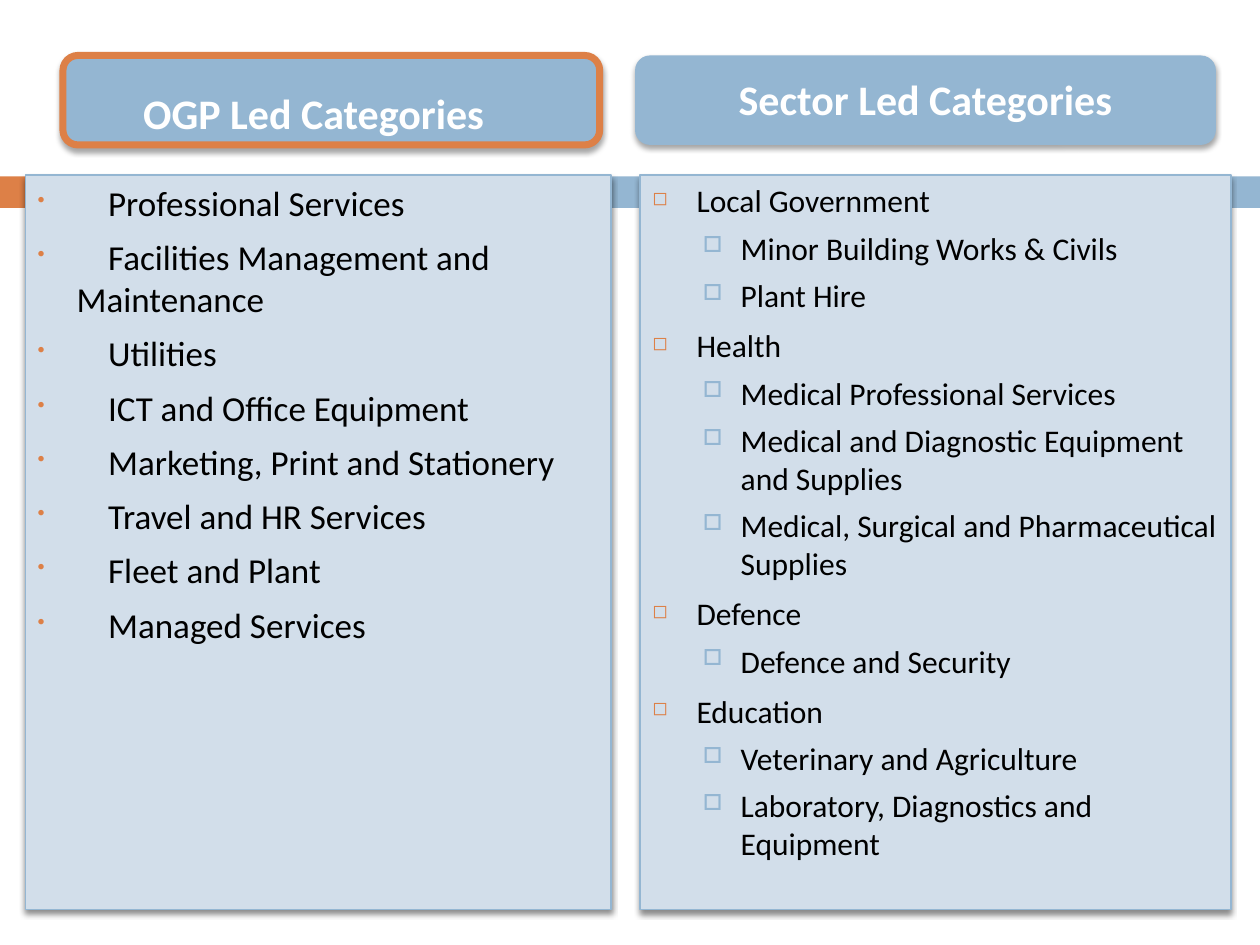
from dataclasses import dataclass

from lxml import etree
from pptx import Presentation
from pptx.dml.color import RGBColor
from pptx.enum.shapes import MSO_SHAPE
from pptx.enum.text import MSO_ANCHOR, PP_ALIGN
from pptx.oxml.ns import qn
from pptx.util import Inches, Pt

RECT, ROUNDED = MSO_SHAPE.RECTANGLE, MSO_SHAPE.ROUNDED_RECTANGLE
TOP, MIDDLE = MSO_ANCHOR.TOP, MSO_ANCHOR.MIDDLE
LEFT, CENTER = PP_ALIGN.LEFT, PP_ALIGN.CENTER


@dataclass(frozen=True)
class Theme:
    font: str = "Calibri"
    orange: str = "DD8047"
    blue: str = "94B6D2"
    pale: str = "D2DEEA"
    white: str = "FFFFFF"
    black: str = "000000"
    heading: float = 24
    ogp_item: float = 20
    sector_item: float = 18


@dataclass(frozen=True)
class Level:
    char: str
    color: str
    percent: int
    margin: float
    hang: float
    before: float
    tabs: tuple = ()


THEME = Theme()
# The tab sets the first line of an item further in than its wrapped lines
OGP_LEVELS = [Level("•", THEME.orange, 60, 0.31, 0.31, 7, (0.25, 0.56))]
SECTOR_LEVELS = [
    Level("◻", THEME.orange, 60, 0.35, 0.35, 7),
    Level("□", THEME.blue, 70, 0.7, 0.3, 5.5),
]

OGP_ITEMS = [
    "Professional Services",
    "Facilities Management and Maintenance",
    "Utilities",
    "ICT and Office Equipment",
    "Marketing, Print and Stationery",
    "Travel and HR Services",
    "Fleet and Plant",
    "Managed Services",
]
SECTORS = {
    "Local Government": ["Minor Building Works & Civils", "Plant Hire"],
    "Health": [
        "Medical Professional Services",
        "Medical and Diagnostic Equipment and Supplies",
        "Medical, Surgical and Pharmaceutical Supplies",
    ],
    "Defence": ["Defence and Security"],
    "Education": [
        "Veterinary and Agriculture",
        "Laboratory, Diagnostics and Equipment",
    ],
}


def add_child(parent, tag, **attrs):
    child = etree.SubElement(parent, qn(tag))
    for name, value in attrs.items():
        child.set(name, str(value))
    return child


def add_shadow(sp, opacity, distance):
    effects = sp._element.spPr.find(qn("a:effectLst"))
    shadow = add_child(effects, "a:outerShdw", blurRad=Pt(3), dist=Pt(distance),
                       dir=90 * 60000, algn="ctr", rotWithShape=0)
    color = add_child(shadow, "a:srgbClr", val=THEME.black)
    add_child(color, "a:alpha", val=opacity * 1000)


def add_block(s, shape, box, fill, line=None, width=0):
    sp = s.shapes.add_shape(shape, *[Inches(v) for v in box])
    sp.shadow.inherit = False
    sp.fill.solid()
    sp.fill.fore_color.rgb = RGBColor.from_string(fill)
    if line:
        sp.line.color.rgb = RGBColor.from_string(line)
        sp.line.width = Pt(width)
    else:
        sp.line.fill.background()
    return sp


def set_frame(sp, anchor, left, top, right, bottom):
    tf = sp.text_frame
    tf.word_wrap = True
    tf.vertical_anchor = anchor
    tf.margin_left, tf.margin_right = Inches(left), Inches(right)
    tf.margin_top, tf.margin_bottom = Inches(top), Inches(bottom)
    return tf


def set_font(p, size, color, bold=False):
    p.font.name = THEME.font
    p.font.size = Pt(size)
    p.font.bold = bold
    p.font.color.rgb = RGBColor.from_string(color)


def add_heading(s, box, text, anchor, insets, line=None, width=0):
    sp = add_block(s, ROUNDED, box, THEME.blue, line, width)
    add_shadow(sp, 35, 2)
    p = set_frame(sp, anchor, *insets).paragraphs[0]
    p.text = text
    p.alignment = CENTER
    set_font(p, THEME.heading, THEME.white, bold=True)


def set_bullet(p, level):
    pPr = p._p.get_or_add_pPr()
    pPr.set("marL", str(Inches(level.margin)))
    pPr.set("indent", str(-Inches(level.hang)))
    add_child(add_child(pPr, "a:buClr"), "a:srgbClr", val=level.color)
    add_child(pPr, "a:buSzPct", val=level.percent * 1000)
    add_child(pPr, "a:buChar", char=level.char)
    if level.tabs:
        tabs = add_child(pPr, "a:tabLst")
        for pos in level.tabs:
            add_child(tabs, "a:tab", pos=Inches(pos), algn="l")


def add_panel(s, box, items, levels, size):
    sp = add_block(s, RECT, box, THEME.pale, THEME.blue, 0.79)
    add_shadow(sp, 45, 2.4)
    tf = set_frame(sp, TOP, 0.1, 0.05, 0.1, 0.05)
    for i, (depth, text) in enumerate(items):
        level = levels[depth]
        p = tf.add_paragraph() if i else tf.paragraphs[0]
        p.text = "\t" + text if level.tabs else text
        p.level = depth
        p.alignment = LEFT
        set_bullet(p, level)
        if i:
            p.space_before = Pt(level.before)
        set_font(p, size, THEME.black)


def main():
    prs = Presentation()
    prs.slide_width, prs.slide_height = Inches(10), Inches(7.5)
    s = prs.slides.add_slide(prs.slide_layouts[6])

    # Band across the slide
    add_block(s, RECT, (0, 1.4, 0.58, 0.25), THEME.orange)
    add_block(s, RECT, (0.65, 1.4, 9.35, 0.25), THEME.blue)

    # OGP column
    add_heading(s, (0.5, 0.44, 4.26, 0.71), "OGP Led Categories", MIDDLE,
                (0.15, 0.3, 0.43, 0.1), THEME.orange, 4)
    add_panel(s, (0.2, 1.39, 4.65, 5.83), [(0, text) for text in OGP_ITEMS],
              OGP_LEVELS, THEME.ogp_item)

    # Sector column
    sector_items = []
    for sector, categories in SECTORS.items():
        sector_items.append((0, sector))
        sector_items += [(1, category) for category in categories]
    add_panel(s, (5.08, 1.39, 4.69, 5.83), sector_items,
              SECTOR_LEVELS, THEME.sector_item)
    add_heading(s, (5.04, 0.44, 4.61, 0.71), "Sector Led Categories", TOP,
                (0.1, 0.11, 0.1, 0.05))

    prs.save("out.pptx")


if __name__ == "__main__":
    main()
